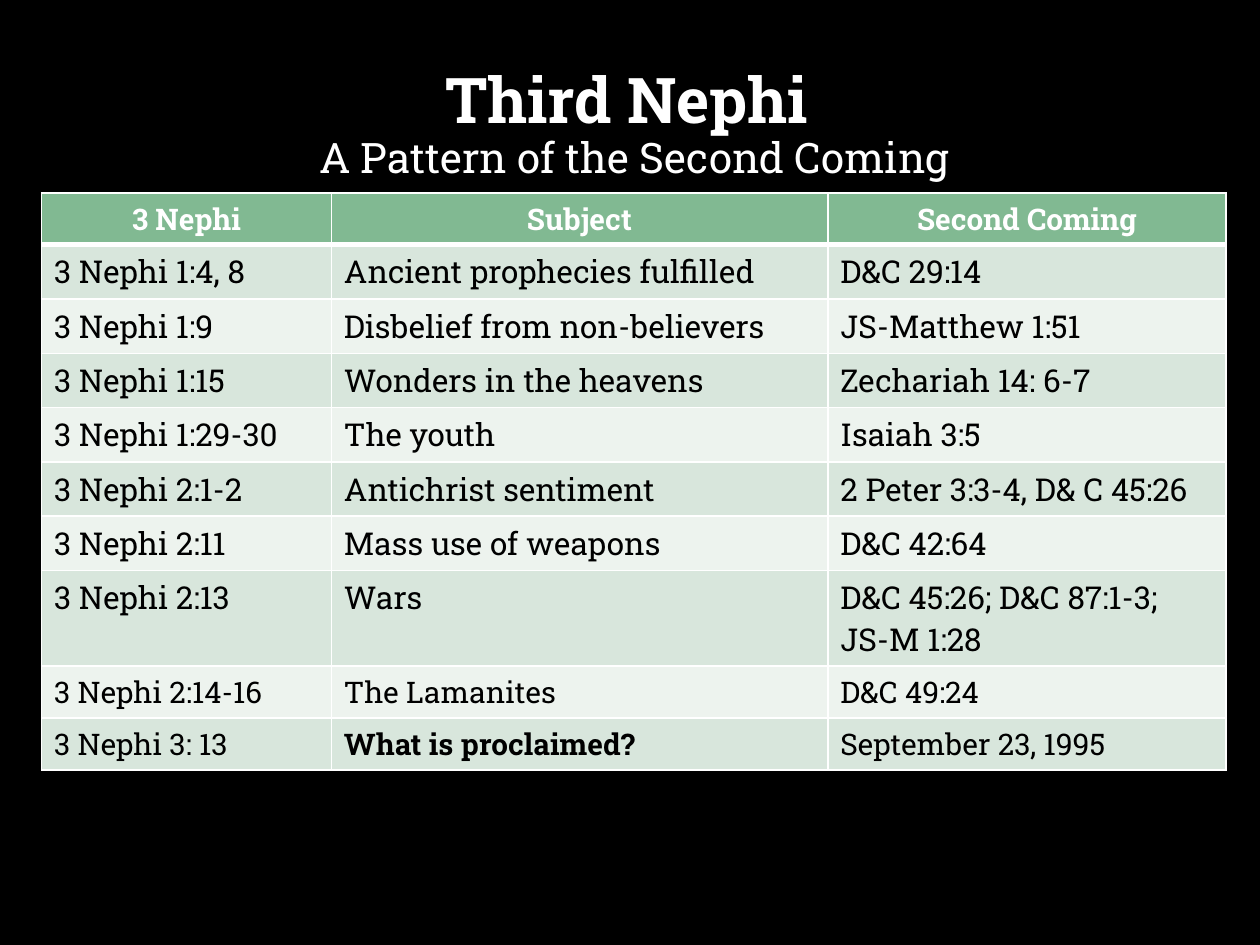
"""Build the Third Nephi slide: a title and a table of Second Coming parallels."""
from pptx import Presentation
from pptx import util as u
from pptx.dml.color import RGBColor
from pptx.enum import text
from pptx.oxml import parse_xml
from pptx.oxml.ns import nsdecls

FONT = "Roboto Slab"
BLACK = RGBColor(0x00, 0x00, 0x00)
WHITE = RGBColor(0xFF, 0xFF, 0xFF)
HEADER_GREEN = RGBColor(0x81, 0xB9, 0x92)
BANDS = (RGBColor(0xED, 0xF3, 0xEE), RGBColor(0xD8, 0xE6, 0xDC))
COLUMN_WIDTHS = (2.3, 3.94, 3.16)
ROW_HEIGHT = 0.41
PARALLELS = (
    ("3 Nephi", "Subject", "Second Coming"),
    ("3 Nephi 1:4, 8", "Ancient prophecies fulfilled", "D&C 29:14"),
    ("3 Nephi 1:9", "Disbelief from non-believers", "JS-Matthew 1:51"),
    ("3 Nephi 1:15", "Wonders in the heavens", "Zechariah 14: 6-7"),
    ("3 Nephi 1:29-30", "The youth", "Isaiah 3:5"),
    ("3 Nephi 2:1-2", "Antichrist sentiment", "2 Peter 3:3-4, D& C 45:26"),
    ("3 Nephi 2:11", "Mass use of weapons", "D&C 42:64"),
    ("3 Nephi 2:13", "Wars", "D&C 45:26; D&C 87:1-3; JS-M 1:28"),
    ("3 Nephi 2:14-16", "The Lamanites", "D&C 49:24"),
    ("3 Nephi 3: 13", "What is proclaimed?", "September 23, 1995"),
)


def format_text(paragraph, size, color, bold):
    font = paragraph.runs[0].font
    font.name, font.size, font.bold = FONT, u.Pt(size), bold
    font.color.rgb = color


def add_border(cell, side, points):
    cell._tc.get_or_add_tcPr().append(parse_xml(
        f'<a:ln{side} {nsdecls("a")} w="{u.Pt(points)}"><a:solidFill>'
        f'<a:srgbClr val="{WHITE}"/></a:solidFill></a:ln{side}>'))


deck = Presentation()
deck.slide_width, deck.slide_height = u.Inches(10), u.Inches(7.5)
slide = deck.slides.add_slide(deck.slide_layouts[5])
slide.background.fill.solid()
slide.background.fill.fore_color.rgb = BLACK

heading = slide.shapes.title
heading.left, heading.top = u.Inches(0.83), u.Inches(0.39)
heading.width, heading.height = u.Inches(8.41), u.Inches(1.11)
heading.text_frame.text = "Third Nephi \nA Pattern of the Second Coming"
heading.text_frame.auto_size = text.MSO_AUTO_SIZE.NONE
heading.text_frame.vertical_anchor = text.MSO_ANCHOR.BOTTOM
for line, size, bold in zip(heading.text_frame.paragraphs, (36, 24), (True, False)):
    line.alignment = text.PP_ALIGN.CENTER
    line.line_spacing = 0.9
    line.space_before = u.Pt(0)
    format_text(line, size, WHITE, bold)

parallels = slide.shapes.add_table(
    len(PARALLELS), len(COLUMN_WIDTHS), u.Inches(0.33), u.Inches(1.53),
    u.Inches(sum(COLUMN_WIDTHS)), u.Inches(ROW_HEIGHT * len(PARALLELS))).table
for column, width in zip(parallels.columns, COLUMN_WIDTHS):
    column.width = u.Inches(width)

for r, entries in enumerate(PARALLELS):
    parallels.rows[r].height = u.Inches(ROW_HEIGHT)
    is_header = r == 0
    for c, entry in enumerate(entries):
        cell = parallels.cell(r, c)
        cell.text_frame.text = entry
        paragraph = cell.text_frame.paragraphs[0]
        if is_header:
            paragraph.alignment = text.PP_ALIGN.CENTER
        format_text(paragraph, 18 if 1 <= r <= 7 else 17,
                    WHITE if is_header else BLACK,
                    is_header or entry == "What is proclaimed?")
        for side in "LRTB":
            under_header = (r, side) in ((0, "B"), (1, "T"))
            add_border(cell, side, 3 if under_header else 1)
        cell.fill.solid()
        cell.fill.fore_color.rgb = HEADER_GREEN if is_header else BANDS[r % 2]

deck.save("out.pptx")
